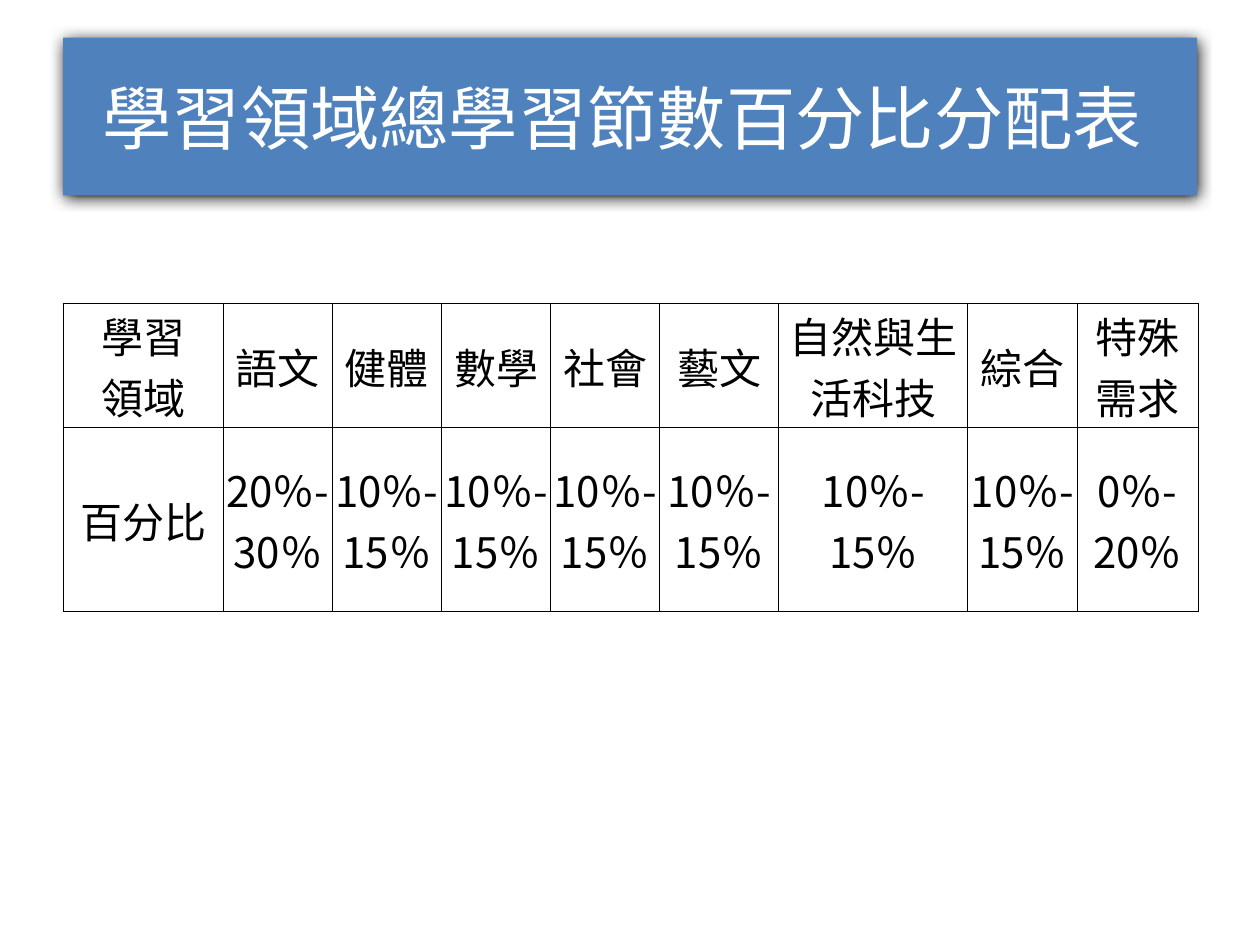
"""Build a slide with the share of lesson periods for each learning area."""
from dataclasses import dataclass

from lxml import etree
from pptx import Presentation
from pptx import util as u
from pptx.dml.color import RGBColor
from pptx.enum import text
from pptx.oxml import parse_xml
from pptx.oxml.ns import nsdecls, qn

BLACK, WHITE, BLUE = "000000", "FFFFFF", "4F81BD"


@dataclass
class Area:
    name: str
    share: str
    width: float


AREAS = [
    Area("學習\n領域", "百分比", 3.23),
    Area("語文", "20％-30％", 2.2),
    Area("健體", "10％-15％", 2.2),
    Area("數學", "10％-15％", 2.2),
    Area("社會", "10％-15％", 2.2),
    Area("藝文", "10％-15％", 2.4),
    Area("自然與生活科技", "10％-\n15％", 3.81),
    Area("綜合", "10％-15％", 2.2),
    Area("特殊需求", "0％-\n20％", 2.44),
]
ROW_HEIGHTS = (2.39, 3.35)


def color(value: str) -> RGBColor:
    return RGBColor.from_string(value)


def write(frame, words: str, *, size: float, font: str, fill: str) -> None:
    frame.text = words
    frame.word_wrap = True
    for paragraph in frame.paragraphs:
        paragraph.alignment = text.PP_ALIGN.CENTER
        for run in paragraph.runs:
            run.font.size = u.Pt(size)
            run.font.bold = False
            run.font.color.rgb = color(fill)
            run.font.name = font
            east_asian = etree.SubElement(run.font._element, qn("a:ea"))
            east_asian.set("typeface", font)


def add_borders(cell, width: float, line_color: str) -> None:
    properties = cell._tc.get_or_add_tcPr()
    for side in "LRTB":
        properties.append(parse_xml(
            f'<a:ln{side} {nsdecls("a")} w="{u.Pt(width)}"><a:solidFill>'
            f'<a:srgbClr val="{line_color}"/></a:solidFill></a:ln{side}>'))


def add_shadow(shape, blur: float, distance: float, line_color: str) -> None:
    shape._element.spPr.append(parse_xml(
        f'<a:effectLst {nsdecls("a")}><a:outerShdw blurRad="{u.Pt(blur)}" '
        f'dist="{u.Pt(distance)}" dir="5400000" rotWithShape="0">'
        f'<a:srgbClr val="{line_color}"/></a:outerShdw></a:effectLst>'))


def format_title(title, words: str) -> None:
    title.left, title.top = u.Cm(1.27), u.Cm(0.76)
    title.width, title.height = u.Cm(22.86), u.Cm(3.18)
    title.fill.solid()
    title.fill.fore_color.rgb = color(BLUE)
    title.line.fill.background()
    add_shadow(title, 8.5, 1, BLACK)
    title.text_frame.vertical_anchor = text.MSO_ANCHOR.MIDDLE
    write(title.text_frame, words, size=39.6, font="Noto Sans CJK SC", fill=WHITE)


def fill_cell(cell, words: str) -> None:
    cell.margin_left = cell.margin_right = cell.margin_top = u.Cm(0.03)
    cell.margin_bottom = u.Cm(0)
    cell.vertical_anchor = text.MSO_ANCHOR.MIDDLE
    add_borders(cell, 0.5, BLACK)
    cell.fill.background()
    write(cell.text_frame, words, size=24, font="Noto Sans CJK TC", fill=BLACK)


def add_share_table(slide, areas: list[Area]) -> None:
    table = slide.shapes.add_table(
        len(ROW_HEIGHTS), len(areas), u.Cm(1.27), u.Cm(6.12),
        u.Cm(sum(area.width for area in areas)), u.Cm(sum(ROW_HEIGHTS))).table
    table.first_row = table.horz_banding = False
    for row, height in zip(table.rows, ROW_HEIGHTS):
        row.height = u.Cm(height)
    for index, area in enumerate(areas):
        table.columns[index].width = u.Cm(area.width)
        fill_cell(table.cell(0, index), area.name)
        fill_cell(table.cell(1, index), area.share)


def main() -> None:
    presentation = Presentation()
    presentation.slide_width, presentation.slide_height = u.Cm(25.4), u.Cm(19.05)
    slide = presentation.slides.add_slide(presentation.slide_layouts[5])
    add_share_table(slide, AREAS)
    format_title(slide.shapes.title, "學習領域總學習節數百分比分配表 ")
    presentation.save("out.pptx")


if __name__ == "__main__":
    main()
